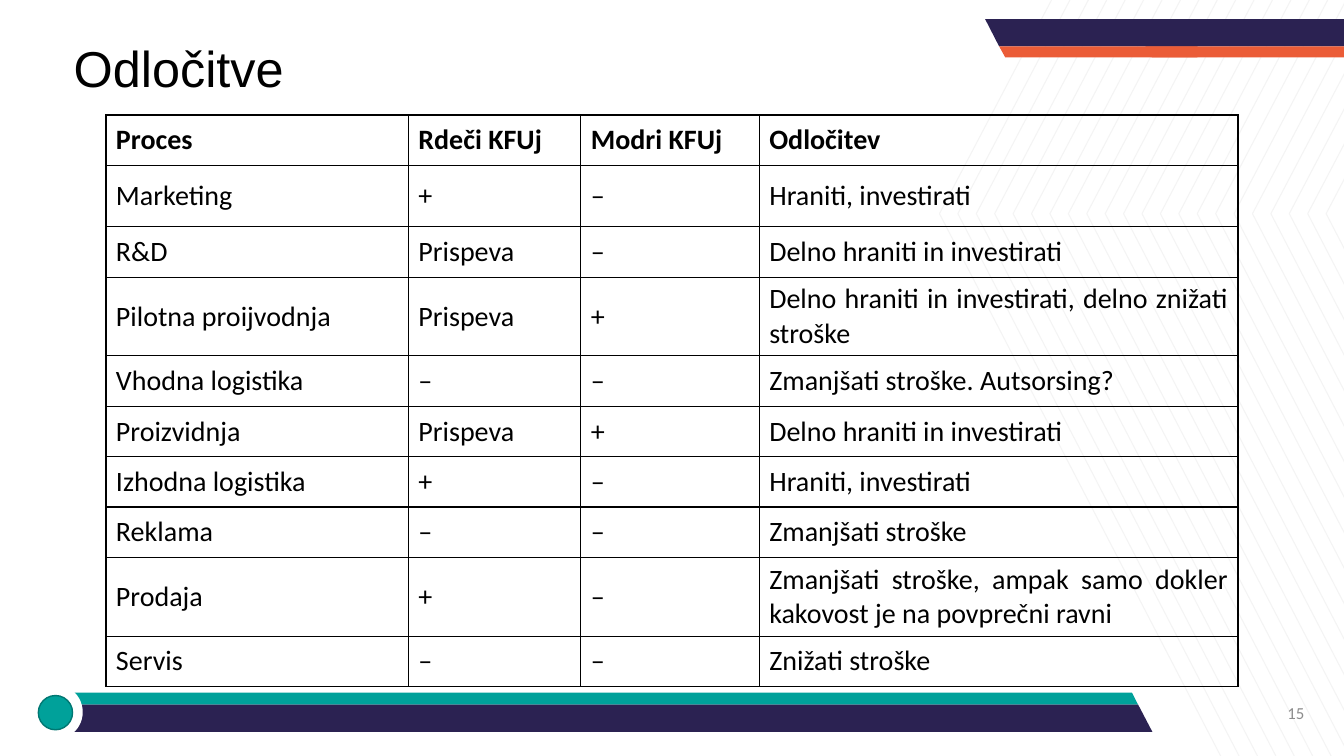
"""Build the slide "Odločitve": a decision table on a decorated page."""
from dataclasses import dataclass

from lxml.etree import SubElement
from pptx import Presentation
from pptx.dml.color import RGBColor
from pptx.enum.shapes import MSO_SHAPE
from pptx.enum.text import MSO_ANCHOR, MSO_AUTO_SIZE, PP_ALIGN
from pptx.oxml import parse_xml
from pptx.oxml.ns import nsdecls, qn
from pptx.util import Inches, Pt

WIDTH, HEIGHT = Inches(13.33), Inches(7.5)


@dataclass(frozen=True)
class Theme:
    navy: str = "2B2252"
    teal: str = "00A19A"
    teal_edge: str = "007772"
    orange: str = "EB5C37"
    white: str = "FFFFFF"
    ink: str = "000000"
    muted: str = "8C8C8C"
    pattern: str = "F4F4F4"
    title_font: str = "Arial"
    body_font: str = "Calibri"
    title_size: int = 36
    body_size: int = 20
    number_size: int = 12


THEME = Theme()

COLUMNS = (22.5, 12.83, 13.28, 35.63)
ROW, TALL_ROW = 6.67, 8.13
DECISIONS = (
    ("Proces", "Rdeči KFUj", "Modri KFUj", "Odločitev"),
    ("Marketing", "+", "–", "Hraniti, investirati"),
    ("R&D", "Prispeva", "–", "Delno hraniti in investirati"),
    ("Pilotna proijvodnja", "Prispeva", "+",
     "Delno hraniti in investirati, delno znižati stroške"),
    ("Vhodna logistika", "–", "–", "Zmanjšati stroške. Autsorsing?"),
    ("Proizvidnja", "Prispeva", "+", "Delno hraniti in investirati"),
    ("Izhodna logistika", "+", "–", "Hraniti, investirati"),
    ("Reklama", "–", "–", "Zmanjšati stroške"),
    ("Prodaja", "+", "–",
     "Zmanjšati stroške, ampak samo dokler kakovost je na povprečni ravni"),
    ("Servis", "–", "–", "Znižati stroške"),
)


def across(percent):
    return round(WIDTH * percent / 100)


def down(percent):
    return round(HEIGHT * percent / 100)


def area(left, top, width, height):
    return across(left), down(top), across(width), down(height)


def paint(shape, fill=None, line=None, weight=1):
    shape.shadow.inherit = False
    if fill:
        shape.fill.solid()
        shape.fill.fore_color.rgb = RGBColor.from_string(fill)
    else:
        shape.fill.background()
    if line:
        shape.line.color.rgb = RGBColor.from_string(line)
        shape.line.width = Pt(weight)
    else:
        shape.line.fill.background()


def add_outline(shapes, points, close=True, **style):
    start, *others = [(across(x), down(y)) for x, y in points]
    builder = shapes.build_freeform(*start, scale=1.0)
    builder.add_line_segments(others, close=close)
    paint(builder.convert_to_shape(), **style)


def add_band(page, top, bottom, upper, lower, fill):
    points = ((upper[0], top), (upper[1], top), (lower[1], bottom), (lower[0], bottom))
    add_outline(page.shapes, points, fill=fill)


def add_dot(page, place, **style):
    paint(page.shapes.add_shape(MSO_SHAPE.OVAL, *area(*place)), **style)


def add_pattern(page):
    group = page.shapes.add_group_shape()
    for index in range(22):
        bend = 69.9 + 1.37 * index
        chevron = ((bend + 8.34, 0), (bend, 28.27), (bend + 20.92, 100))
        add_outline(group.shapes, chevron, close=False,
                    line=THEME.pattern, weight=0.75)


def add_bands(page):
    add_band(page, 91.6, 93.2, (4.05, 84.22), (4.05, 84.68), THEME.teal)
    add_band(page, 93.2, 96.8, (4.05, 84.68), (4.05, 85.74), THEME.navy)
    for shift in (10.9, 0):
        right = 89.1 + shift
        for top, bottom, upper, lower, fill in (
                (2.53, 6.13, 73.3, 74.34, THEME.navy),
                (6.13, 7.6, 74.34, 74.8, THEME.orange)):
            add_band(page, top, bottom, (upper + shift, right),
                     (lower + shift, right), fill)


def format_text(paragraph, font, size, color, bold=False):
    paragraph.font.name = font
    paragraph.font.size = Pt(size)
    paragraph.font.bold = bold
    paragraph.font.color.rgb = RGBColor.from_string(color)


def fill_box(box, text, place, anchor):
    box.left, box.top, box.width, box.height = area(*place)
    frame = box.text_frame
    frame.text = text
    frame.word_wrap = True
    frame.auto_size = MSO_AUTO_SIZE.NONE
    frame.vertical_anchor = anchor
    frame.margin_left = frame.margin_right = 0
    frame.margin_top = frame.margin_bottom = 0
    return frame.paragraphs[0]


def add_title(page, text):
    para = fill_box(page.shapes.title, text, (5.48, 5.87, 89.1, 7.33), MSO_ANCHOR.TOP)
    para.alignment = PP_ALIGN.LEFT
    para.line_spacing = 0.9
    format_text(para, THEME.title_font, THEME.title_size, THEME.ink)


def add_page_number(page, text):
    place = (91.65, 92.93, 5.4, 2.67)
    box = page.shapes.add_textbox(*area(*place))
    para = fill_box(box, text, place, MSO_ANCHOR.MIDDLE)
    para.alignment = PP_ALIGN.RIGHT
    format_text(para, THEME.body_font, THEME.number_size, THEME.muted)


def border_cell(cell):
    properties = cell._tc.get_or_add_tcPr()
    for index, side in enumerate(("lnL", "lnR", "lnT", "lnB")):
        border = parse_xml(f'<a:{side} {nsdecls("a")} w="{Pt(1)}"/>')
        fill = SubElement(border, qn("a:solidFill"))
        SubElement(fill, qn("a:srgbClr"), val=THEME.ink)
        properties.insert(index, border)


def fill_cell(cell, text, bold):
    cell.text = text
    cell.vertical_anchor = MSO_ANCHOR.MIDDLE
    cell.fill.background()
    para = cell.text_frame.paragraphs[0]
    para.alignment = PP_ALIGN.JUSTIFY
    format_text(para, THEME.body_font, THEME.body_size, THEME.ink, bold)
    border_cell(cell)


def add_decision_table(page, rows):
    heights = [TALL_ROW if index == 1 else ROW for index in range(len(rows))]
    place = area(7.88, 15.2, sum(COLUMNS), sum(heights))
    table = page.shapes.add_table(len(rows), len(COLUMNS), *place).table
    table.first_row = table.horz_banding = False
    for column, width in zip(table.columns, COLUMNS):
        column.width = across(width)
    for index, (row, height, texts) in enumerate(zip(table.rows, heights, rows)):
        row.height = down(height)
        for cell, text in zip(row.cells, texts):
            fill_cell(cell, text, bold=index == 0)


def main():
    deck = Presentation()
    deck.slide_width, deck.slide_height = WIDTH, HEIGHT
    page = deck.slides.add_slide(deck.slide_layouts[5])
    add_pattern(page)
    add_bands(page)
    add_dot(page, (2.03, 90.53, 4.13, 7.33), fill=THEME.white)
    add_dot(page, (2.85, 92, 2.55, 4.53), fill=THEME.teal, line=THEME.teal_edge)
    add_title(page, "Odločitve")
    add_page_number(page, "15")
    add_decision_table(page, DECISIONS)
    deck.save("out.pptx")


if __name__ == "__main__":
    main()
